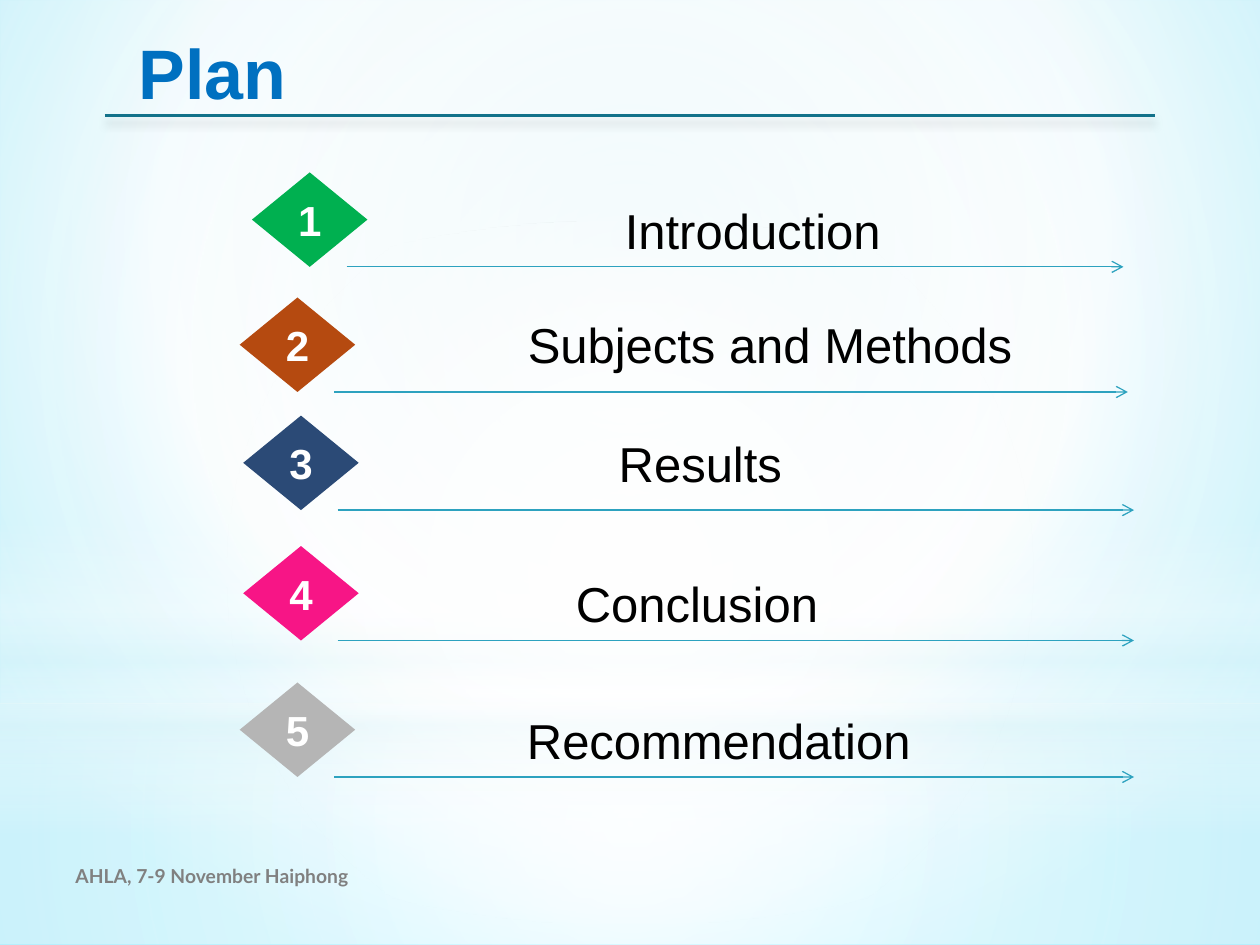
from lxml.etree import SubElement
from pptx import Presentation
from pptx.dml.color import RGBColor
from pptx.enum.shapes import MSO_CONNECTOR as Connector, MSO_SHAPE as Shape
from pptx.enum.text import MSO_ANCHOR as Anchor, PP_ALIGN as Align
from pptx.oxml.ns import qn
from pptx.util import Pt

COLORS = {
    "white": "FFFFFF", "pale": "DEF5FA", "mist": "CDEFF7", "sky": "7CE7FF",
    "title": "0070C0", "rule": "12728A", "arrow": "2DA2BF", "text": "000000",
    "footer": "808080", "green": "00B050", "rust": "B54A10", "navy": "2B4A76",
    "pink": "F71586", "gray": "B5B5B5",
}
CENTER = (50, 50, 50, 50)

# number, topic, color, row box, label offset from the row's corner, label width
ROWS = [
    (1, "Introduction", "green", (144, 98.5, 498, 54), (206, 12.5), 167),
    (2, "Subjects and Methods", "rust", (137, 170, 507.5, 54), (157.5, 6), 294.5),
    (3, "Results", "navy", (139, 237.5, 509, 54), (207.5, 6.5), 116.5),
    (4, "Conclusion", "pink", (139, 312, 509, 54), (183, 12), 163),
    (5, "Recommendation", "gray", (137, 390, 511, 54), (157, 12.5), 245),
]

# shape, box, gradient stops (position, color, opacity), focus or None for linear
LAYERS = [
    (Shape.RECTANGLE, (0, 402, 720, 138),
     [(0, "white", 91), (37, "white", 76), (100, "pale", 79)], CENTER),
    (Shape.RECTANGLE, (0, 0, 720, 402),
     [(0, "white", 89), (48, "white", 62), (100, "pale", 79)], CENTER),
    (Shape.RECTANGLE, (0, 297, 720, 180),
     [(0, "white", 0), (29, "white", 30), (45, "pale", 40), (55, "white", 26),
      (65, "pale", 60), (100, "white", 0)], None),
    (Shape.OVAL, (0, 126, 720, 402),
     [(0, "white", 100), (56, "white", 0)], CENTER),
]


def rgb(name):
    return RGBColor.from_string(COLORS[name])


def points(*values):
    return [Pt(value) for value in values]


def set_gradient(fill, parent, stops, focus):
    """Fill with a gradient whose stops may be see-through, radial if focus is given."""
    fill.gradient()
    gradient = parent.find(qn("a:gradFill"))
    for child in list(gradient):
        gradient.remove(child)
    stop_list = SubElement(gradient, qn("a:gsLst"))
    for position, color, opacity in stops:
        stop = SubElement(stop_list, qn("a:gs"), pos=str(position * 1000))
        tint = SubElement(stop, qn("a:srgbClr"), val=COLORS[color])
        if opacity < 100:
            SubElement(tint, qn("a:alpha"), val=str(opacity * 1000))
    if focus:
        circle = SubElement(gradient, qn("a:path"), path="circle")
        edges = {side: str(share * 1000) for side, share in zip("ltrb", focus)}
        SubElement(circle, qn("a:fillToRect"), **edges)
    else:
        SubElement(gradient, qn("a:lin"), ang="5400000", scaled="0")


def add_line(shapes, start, end, color, width):
    """Draw a line and return it with its empty effect list."""
    line = shapes.add_connector(Connector.STRAIGHT, *points(*start, *end))
    line.line.color.rgb = rgb(color)
    line.line.width = Pt(width)
    return line, SubElement(line.element.spPr, qn("a:effectLst"))


def write(frame, text, size, color, font="Arial", bold=False,
          align=Align.LEFT, anchor=Anchor.TOP, wrap=False):
    frame.text = text
    frame.word_wrap = wrap
    frame.vertical_anchor = anchor
    para = frame.paragraphs[0]
    para.alignment = align
    span = para.runs[0].font
    span.name, span.size, span.bold = font, Pt(size), bold
    span.color.rgb = rgb(color)


def add_backdrop(page):
    fill = page.background.fill
    set_gradient(fill, page.element.find(".//" + qn("p:bgPr")),
                 [(0, "mist", 100), (60, "white", 100), (100, "sky", 100)],
                 (20, 10, 20, 60))
    for kind, box, stops, focus in LAYERS:
        layer = page.shapes.add_shape(kind, *points(*box))
        layer.shadow.inherit = False
        layer.line.fill.background()
        set_gradient(layer.fill, layer.element.spPr, stops, focus)


def add_heading(page, box):
    """Place the title and, below it, the shadowed rule."""
    left, top, width, height = box
    _, effects = add_line(page.shapes, (left, top + height),
                          (left + width, top + height), "rule", 1.25)
    shadow = SubElement(effects, qn("a:outerShdw"), blurRad=str(Pt(5)),
                        dist=str(Pt(4)), dir="5400000", rotWithShape="0")
    tint = SubElement(shadow, qn("a:srgbClr"), val=COLORS["text"])
    SubElement(tint, qn("a:alpha"), val="20000")

    title = page.shapes.title
    title.left, title.top, title.width, title.height = points(left + 12, top, 111, 55.5)
    write(title.text_frame, "Plan", 40, "title", bold=True)
    page.shapes.element.append(title.element)  # in front of the backdrop


def add_row(page, number, topic, color, box, offset, label_width):
    left, top, width, height = box
    shapes = page.shapes.add_group_shape().shapes

    diamond = shapes.add_shape(Shape.DIAMOND, *points(left, top, 66, height))
    diamond.shadow.inherit = False
    diamond.fill.solid()
    diamond.fill.fore_color.rgb = rgb(color)
    diamond.line.fill.background()
    write(diamond.text_frame, str(number), 24, "white", bold=True,
          align=Align.CENTER, anchor=Anchor.MIDDLE)

    base = top + height
    arrow, _ = add_line(shapes, (left + 54, base), (left + width, base), "arrow", 0.75)
    SubElement(arrow.element.spPr.find(qn("a:ln")), qn("a:tailEnd"), type="arrow")

    label = shapes.add_textbox(*points(left + offset[0], top + offset[1], label_width, 41))
    write(label.text_frame, topic, 28, "text")


def add_footer(page, box):
    footer = page.shapes.add_textbox(*points(*box))
    write(footer.text_frame, "AHLA, 7-9 November Haiphong", 11, "footer",
          font="Lato", bold=True, anchor=Anchor.MIDDLE, wrap=True)


def main():
    deck = Presentation()
    deck.slide_width, deck.slide_height = points(720, 540)
    page = deck.slides.add_slide(deck.slide_layouts[5])
    add_backdrop(page)
    add_heading(page, (60, 13, 600, 53))
    for row in ROWS:
        add_row(page, *row)
    add_footer(page, (36, 486, 264, 29))
    deck.save("out.pptx")


if __name__ == "__main__":
    main()
